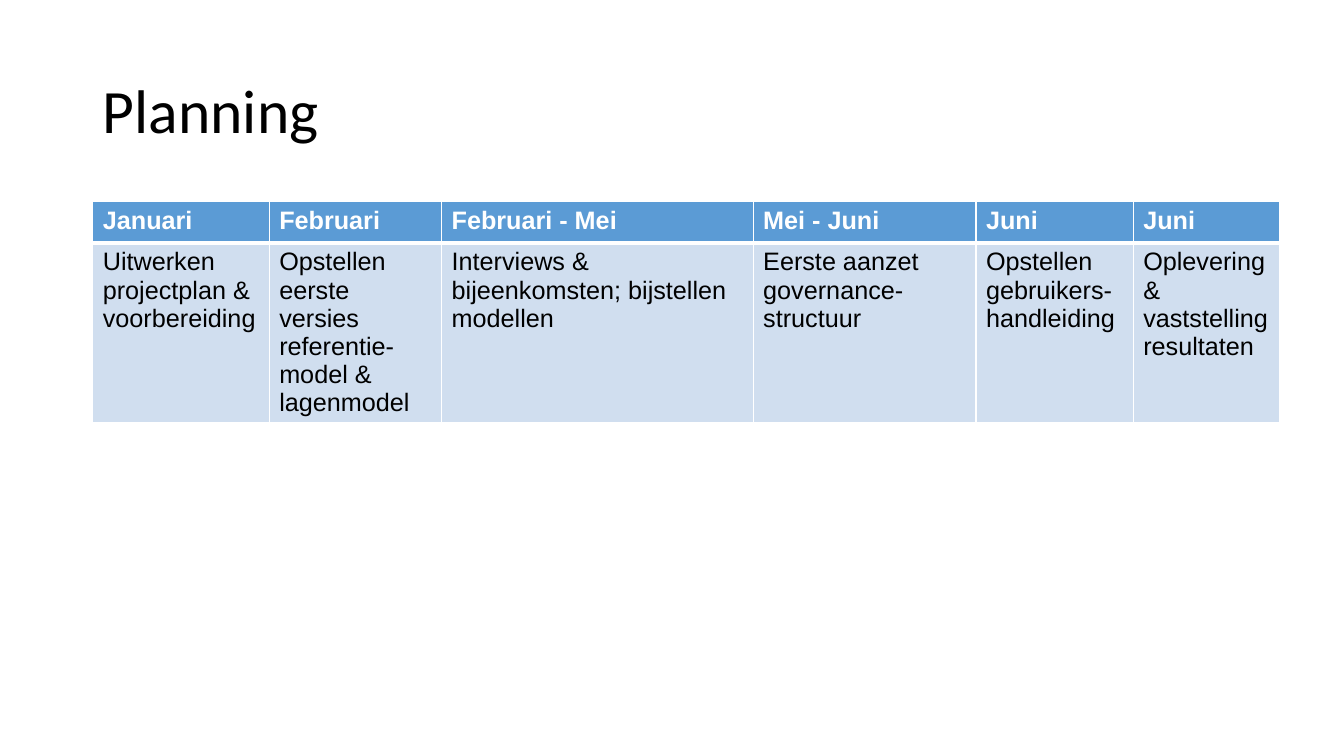
from dataclasses import dataclass

from lxml import etree
from pptx import Presentation
from pptx.dml.color import RGBColor
from pptx.enum import text
from pptx.oxml import ns
from pptx.util import Inches, Pt


@dataclass(frozen=True)
class Theme:
    title_font: str = "Calibri"
    table_font: str = "Arial"
    title_size: int = 44
    table_size: int = 18
    black: str = "000000"
    white: str = "FFFFFF"
    header_fill: str = "5B9BD5"
    body_fill: str = "D0DEEF"


theme = Theme()


def style_font(font, name, size, color, bold=False):
    font.name = name
    font.size = Pt(size)
    font.bold = bold
    font.color.rgb = RGBColor.from_string(color)


def add_borders(cell, widths):
    """Draw white cell edges; widths are points for left, right, top, bottom."""
    properties = cell._tc.get_or_add_tcPr()
    for position, (side, width) in enumerate(zip("LRTB", widths)):
        edge = etree.Element(ns.qn(f"a:ln{side}"), w=str(Pt(width)))
        fill = etree.SubElement(edge, ns.qn("a:solidFill"))
        etree.SubElement(fill, ns.qn("a:srgbClr"), val=theme.white)
        properties.insert(position, edge)


presentation = Presentation()
presentation.slide_width = Inches(13.33)
presentation.slide_height = Inches(7.5)
slide = presentation.slides.add_slide(presentation.slide_layouts[5])

title = slide.shapes.title
title.left, title.top = Inches(0.92), Inches(0.4)
title.width, title.height = Inches(11.5), Inches(1.45)
title.text_frame.text = "Planning"
title.text_frame.vertical_anchor = text.MSO_ANCHOR.MIDDLE
heading = title.text_frame.paragraphs[0]
heading.alignment = text.PP_ALIGN.LEFT
heading.line_spacing = 0.9
style_font(heading.runs[0].font, theme.title_font, theme.title_size, theme.black)

# Period, activity, column width
phases = [
    ("Januari", "Uitwerken projectplan & voorbereiding", 1.75),
    ("Februari", "Opstellen eerste versies referentie-model & lagenmodel", 1.71),
    ("Februari - Mei", "Interviews & bijeenkomsten; bijstellen modellen", 3.09),
    ("Mei - Juni", "Eerste aanzet governance-structuur", 2.21),
    ("Juni", "Opstellen gebruikers-handleiding", 1.56),
    ("Juni", "Oplevering & vaststelling resultaten", 1.45),
]
# Fill, text colour, bold, border widths
row_styles = [
    (theme.header_fill, theme.white, True, (1, 1, 1, 3)),
    (theme.body_fill, theme.black, False, (1, 1, 3, 1)),
]
row_height = 0.41

table_width = sum(width for _, _, width in phases)
planning = slide.shapes.add_table(
    len(row_styles), len(phases), Inches(0.92), Inches(2),
    Inches(table_width), Inches(row_height * len(row_styles))).table

for column, (period, activity, width) in enumerate(phases):
    planning.columns[column].width = Inches(width)
    for row, (wording, row_style) in enumerate(zip((period, activity), row_styles)):
        fill, color, bold, borders = row_style
        cell = planning.cell(row, column)
        cell.text_frame.text = wording
        style_font(cell.text_frame.paragraphs[0].runs[0].font,
                   theme.table_font, theme.table_size, color, bold)
        cell.fill.solid()
        cell.fill.fore_color.rgb = RGBColor.from_string(fill)
        add_borders(cell, borders)

presentation.save("out.pptx")
